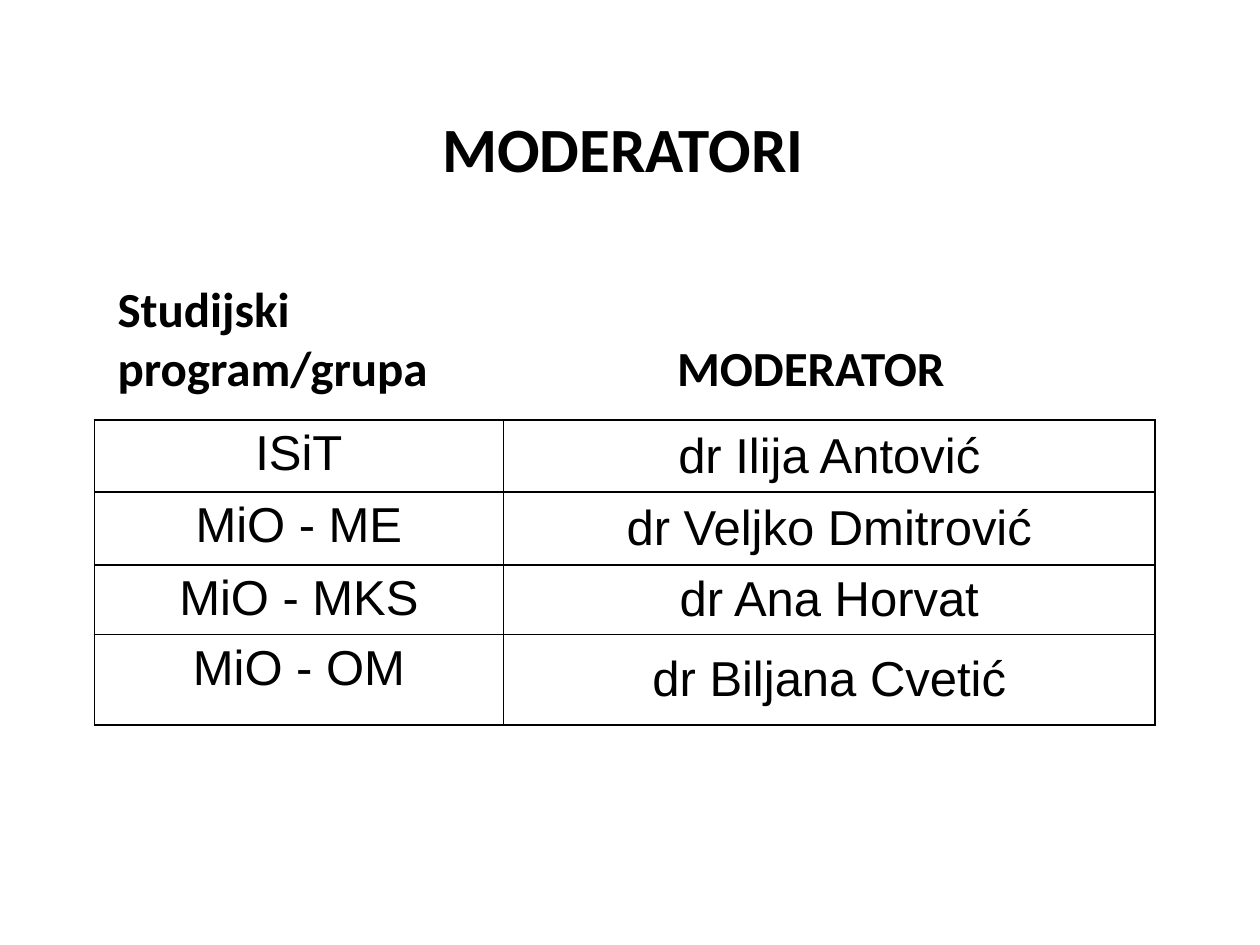
from lxml.etree import SubElement
from pptx import Presentation
from pptx.dml.color import RGBColor
from pptx.enum.text import MSO_ANCHOR, PP_ALIGN
from pptx.oxml import parse_xml
from pptx.oxml.ns import nsdecls, qn
from pptx.util import Cm, Pt

BLACK = RGBColor(0, 0, 0)
WHITE = RGBColor(255, 255, 255)
HEADING_FONT = "Calibri"
TABLE_FONT = "Arial"

MODERATORS = [
    ("ISiT", "dr Ilija Antović"),
    ("MiO - ME", "dr Veljko Dmitrović"),
    ("MiO - MKS", "dr Ana Horvat"),
    ("MiO - OM", "dr Biljana Cvetić"),
]
COLUMN_WIDTHS = (Cm(8.25), Cm(13.13))
ROW_HEIGHTS = (Cm(1.45), Cm(1.47), Cm(1.4), Cm(1.83))


def style(paragraph, font_name, size, bold, alignment):
    paragraph.alignment = alignment
    font = paragraph.font
    font.name, font.size, font.bold = font_name, Pt(size), bold
    font.color.rgb = BLACK


def add_title(slide, left, top, width, height):
    title = slide.shapes.title
    title.left, title.top, title.width, title.height = left, top, width, height
    title.text_frame.vertical_anchor = MSO_ANCHOR.MIDDLE
    title.text_frame.text = "MODERATORI "
    style(title.text_frame.paragraphs[0], HEADING_FONT, 36, True, PP_ALIGN.CENTER)


def add_column_headings(slide, left, top, width, height):
    """Two lines of heading; a tab stop places the second column's heading."""
    headings = slide.shapes.add_textbox(left, top, width, height).text_frame
    headings.word_wrap = True
    headings.text = "Studijski\nprogram/grupa\tMODERATOR"
    for line in headings.paragraphs:
        style(line, HEADING_FONT, 28, True, PP_ALIGN.LEFT)
    properties = headings.paragraphs[1]._p.get_or_add_pPr()
    stops = parse_xml(f'<a:tabLst {nsdecls("a")}/>')
    SubElement(stops, qn("a:tab"), pos=str(Cm(11.28)), algn="l")
    properties.find(qn("a:defRPr")).addprevious(stops)


def add_borders(cell):
    properties = cell._tc.get_or_add_tcPr()
    for position, side in enumerate("LRTB"):
        border = parse_xml(
            f'<a:ln{side} {nsdecls("a")} w="{Pt(1)}"><a:solidFill>'
            f'<a:srgbClr val="{BLACK}"/></a:solidFill></a:ln{side}>'
        )
        properties.insert(position, border)


def add_moderator_table(slide, left, top):
    table = slide.shapes.add_table(
        len(MODERATORS), len(COLUMN_WIDTHS), left, top,
        sum(COLUMN_WIDTHS), sum(ROW_HEIGHTS),
    ).table
    table.first_row = table.horz_banding = False
    for column, width in zip(table.columns, COLUMN_WIDTHS):
        column.width = width
    anchors = (MSO_ANCHOR.TOP, MSO_ANCHOR.MIDDLE)
    for row, height, entry in zip(table.rows, ROW_HEIGHTS, MODERATORS):
        row.height = height
        for cell, text, anchor in zip(row.cells, entry, anchors):
            cell.text = text
            cell.vertical_anchor = anchor
            cell.fill.solid()
            cell.fill.fore_color.rgb = WHITE
            style(cell.text_frame.paragraphs[0], TABLE_FONT, 28, False, PP_ALIGN.CENTER)
            add_borders(cell)


def main():
    presentation = Presentation()
    presentation.slide_width, presentation.slide_height = Cm(25.4), Cm(19.05)
    title_only = presentation.slide_layouts[5]
    slide = presentation.slides.add_slide(title_only)
    add_title(slide, Cm(0), Cm(0.85), presentation.slide_width, Cm(4.23))
    add_moderator_table(slide, Cm(1.9), Cm(8.47))
    add_column_headings(slide, Cm(2.12), Cm(5.5), Cm(17.35), Cm(2.65))
    presentation.save("out.pptx")


if __name__ == "__main__":
    main()
